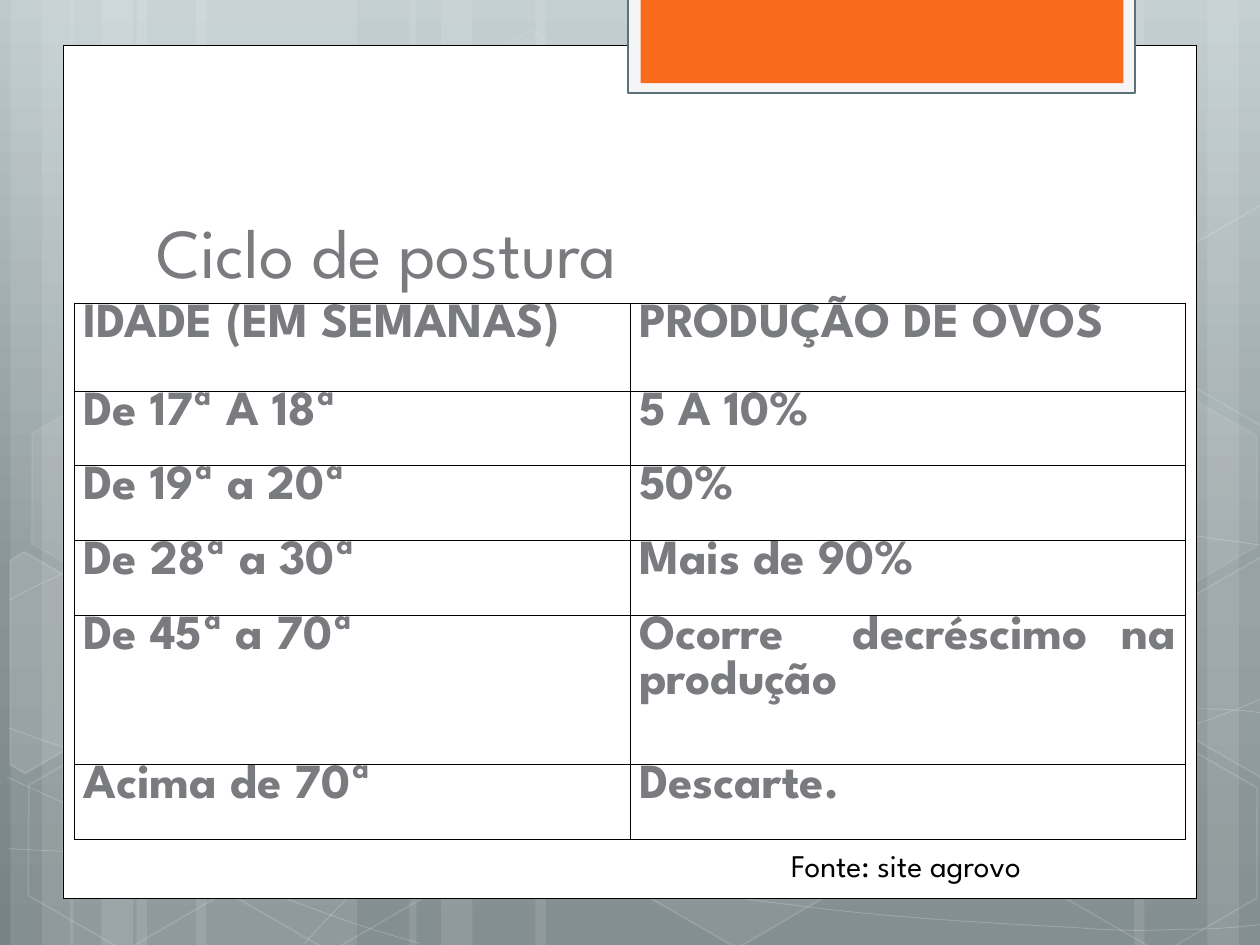
"""Build the laying-cycle slide: striped backdrop, white panel, title, table and source."""
from copy import deepcopy
from typing import NamedTuple, Optional

from lxml.etree import SubElement
from pptx import Presentation
from pptx.dml.color import RGBColor
from pptx.enum.shapes import MSO_SHAPE as Preset
from pptx.enum.text import MSO_ANCHOR as Anchor, MSO_AUTO_SIZE as AutoSize, PP_ALIGN as Align
from pptx.oxml.ns import qn
from pptx.util import Pt

COLORS = {
    "sky": "BDCACD", "mist": "889497", "slate": "778386", "white": "FFFFFF", "black": "000000",
    "tab": "F5F5F5", "tab_line": "5B7378", "orange": "F96A1B", "text": "797B7E",
}
FONT = "League Spartan"
WIDTH, HEIGHT = 720, 540
TILT = 30


class Ink(NamedTuple):
    color: str
    alpha: int = 100
    width: float = 1


class Box(NamedTuple):
    left: float
    top: float
    width: float
    height: float

    def lengths(self) -> list:
        return [Pt(value) for value in self]


class Panel(NamedTuple):
    box: Box
    fill: Ink
    line: Optional[Ink] = None


class StripeCluster(NamedTuple):
    edge: float
    wide: float = 126
    direction: int = 1


class Hexagon(NamedTuple):
    left: float
    top: float
    fill_alpha: int
    line_alpha: int


class CutHexagon(NamedTuple):
    points: list
    fill_alpha: int


BACKDROP = [(0, "sky"), (0.62, "mist"), (1, "slate")]
STRIPE_CLUSTERS = [StripeCluster(6), StripeCluster(40), StripeCluster(726, direction=-1),
                   StripeCluster(234, wide=222)]
CURVES = [
    [(5, 485), (44, 487), (83, 489), (137, 488), (191, 487), (258, 486), (330, 479),
     (402, 472), (504, 458), (570, 444), (636, 431), (703, 409), (725, 397)],
    [(5, 343), (26, 332), (47, 321), (87, 310), (128, 300), (186, 284), (250, 279),
     (314, 274), (392, 273), (471, 279), (550, 284), (682, 307), (725, 312)],
    [(4, 444), (91, 484), (178, 523), (240, 539)],
    [(5, 416), (27, 424), (50, 432), (92, 444), (134, 454), (197, 472), (257, 485),
     (317, 497), (392, 510), (452, 517), (512, 525), (576, 528), (614, 530),
     (652, 533), (662, 531), (680, 531), (699, 531), (712, 529), (725, 528)],
    [(174, 539), (187, 525), (200, 510), (217, 498), (235, 485), (259, 470), (279, 460),
     (300, 450), (312, 446), (338, 438), (364, 431), (413, 421), (438, 416),
     (464, 411), (467, 411), (490, 410), (512, 407), (547, 405), (572, 405),
     (597, 404), (638, 405), (638, 405), (654, 405), (670, 405), (686, 405),
     (699, 405), (711, 406), (718, 407), (724, 408), (722, 407), (724, 408)],
]
HEXAGONS = [
    Hexagon(240.5, 26, 4, 8), Hexagon(358, 424, 6, 12), Hexagon(8, 425.5, 0, 12),
    Hexagon(10, 224.5, 7, 8), Hexagon(125.5, 426, 0, 12),
    Hexagon(600.5, 427, 0, 12), Hexagon(600.5, 226, 7, 8),
]
RIGHT_CUT = [(660, 373.5), (691, 319.7), (697.5, 319.7), (757.5, 423.5), (754.5, 429), (692, 429)]
CUT_HEXAGONS = [
    CutHexagon([(-24, 339), (-19.6, 330.6), (44, 330.6), (75.3, 385.8), (44.3, 440), (34.4, 440)], 10),
    CutHexagon(RIGHT_CUT, 4),
    CutHexagon([(x, y - 201) for x, y in RIGHT_CUT], 0),
]
PANELS = [
    Panel(Box(36, 26, 648, 487.3), Ink("white"), Ink("black", width=0.5)),
    Panel(Box(359, -1.5, 289.7, 54.7), Ink("tab"), Ink("tab_line", width=1.25)),
    Panel(Box(366, -1.5, 276, 49), Ink("orange")),
]
TABLE_BOX = Box(42.5, 173.4, 635, 306.2)
ROW_HEIGHTS = [50, 42.7, 42.7, 42.7, 85.4, 42.7]
ROWS = [
    ("IDADE (EM SEMANAS)", "PRODUÇÃO DE OVOS"),
    ("De 17ª A 18ª", "5 A 10%"),
    ("De 19ª a 20ª", "50%"),
    ("De 28ª a 30ª", "Mais de 90%"),
    ("De 45ª a 70ª", "Ocorre  decréscimo na produção"),
    ("Acima de 70ª", "Descarte."),
]


def set_all(target, values: dict) -> None:
    for name, value in values.items():
        setattr(target, name, value)


def apply_ink(fill, ink: Optional[Ink]) -> None:
    if ink is None or ink.alpha == 0:
        fill.background()
        return
    fill.solid()
    fill.fore_color.rgb = RGBColor.from_string(COLORS[ink.color])
    if ink.alpha < 100:
        color = fill._xPr.find(qn("a:solidFill"))[0]
        SubElement(color, qn("a:alpha"), val=str(ink.alpha * 1000))


def paint(shape, fill: Optional[Ink], line: Optional[Ink] = None) -> None:
    shape.shadow.inherit = False
    apply_ink(shape.fill, fill)
    apply_ink(shape.line.fill, line)
    if line:
        shape.line.width = Pt(line.width)


def write(frame, text: str, size: float, color: str, align=Align.LEFT, bold: bool = False) -> None:
    frame.text = text
    paragraph = frame.paragraphs[0]
    paragraph.alignment = align
    font = paragraph.runs[0].font
    set_all(font, {"name": FONT, "size": Pt(size), "bold": bold})
    font.color.rgb = RGBColor.from_string(COLORS[color])


def draw_backdrop(slide) -> None:
    fill = slide.background.fill
    fill.gradient()
    fill.gradient_angle = 270
    stop_list = slide._element.find(".//" + qn("a:gsLst"))
    stop_list.append(deepcopy(stop_list[-1]))
    for stop, (position, color) in zip(fill.gradient_stops, BACKDROP):
        stop.color.rgb = RGBColor.from_string(COLORS[color])
        stop.position = position


def draw_stripes(slide, cluster: StripeCluster) -> None:
    for offset, width in ((72, cluster.wide), (0, 36), (18, 60)):
        left = cluster.edge + cluster.direction * offset - (width if cluster.direction < 0 else 0)
        stripe = slide.shapes.add_shape(Preset.RECTANGLE, *Box(left, 0, width, HEIGHT).lengths())
        paint(stripe, Ink("white", 10))


def add_outline(slide, points: list, close: bool):
    start, *others = [(Pt(x), Pt(y)) for x, y in points]
    builder = slide.shapes.build_freeform(*start)
    builder.add_line_segments(others, close=close)
    return builder.convert_to_shape()


def draw_curve(slide, controls: list) -> None:
    shape = add_outline(slide, controls, False)
    outline = shape._element.find(".//" + qn("a:path"))
    segments = outline.findall(qn("a:lnTo"))
    for first in range(0, len(segments), 3):
        bezier = SubElement(outline, qn("a:cubicBezTo"))
        for segment in segments[first:first + 3]:
            bezier.append(segment[0])
            outline.remove(segment)
    paint(shape, None, Ink("white", 20, 0.5))


def draw_hexagon(slide, hexagon: Hexagon) -> None:
    box = Box(hexagon.left, hexagon.top, 126, 109.4)
    shape = slide.shapes.add_shape(Preset.HEXAGON, *box.lengths())
    shape.adjustments[0] = 0.285
    shape.rotation = TILT
    paint(shape, Ink("white", hexagon.fill_alpha), Ink("white", hexagon.line_alpha))


def draw_cut_hexagon(slide, cut: CutHexagon) -> None:
    shape = add_outline(slide, cut.points, True)
    shape.rotation = TILT
    paint(shape, Ink("white", cut.fill_alpha), Ink("white", 12))


def draw_panel(slide, panel: Panel) -> None:
    shape = slide.shapes.add_shape(Preset.RECTANGLE, *panel.box.lengths())
    paint(shape, panel.fill, panel.line)


def draw_title(slide) -> None:
    title = slide.shapes.title
    slide.shapes._spTree.append(title._element)
    set_all(title, dict(zip(Box._fields, Box(82, 80.6, 553, 90).lengths())))
    set_all(title.text_frame, {"vertical_anchor": Anchor.BOTTOM, "auto_size": AutoSize.NONE,
                               "word_wrap": True})
    write(title.text_frame, "Ciclo de postura", 40, "text")


def add_borders(cell) -> None:
    properties = cell._tc.get_or_add_tcPr()
    for index, side in enumerate(("lnL", "lnR", "lnT", "lnB")):
        border = SubElement(properties, qn("a:" + side), w=str(Pt(0.5)))
        solid = SubElement(border, qn("a:solidFill"))
        SubElement(solid, qn("a:srgbClr"), val=COLORS["black"])
        properties.insert(index, border)


def draw_table(slide) -> None:
    table = slide.shapes.add_table(len(ROWS), len(ROWS[0]), *TABLE_BOX.lengths()).table
    set_all(table, {"first_row": False, "horz_banding": False})
    for row, height, texts in zip(table.rows, ROW_HEIGHTS, ROWS):
        row.height = Pt(height)
        for cell, text in zip(row.cells, texts):
            set_all(cell, {"margin_left": Pt(5.3), "margin_right": Pt(5.3),
                           "margin_top": 0, "margin_bottom": 0})
            cell.fill.background()
            add_borders(cell)
            write(cell.text_frame, text, 28, "text", Align.JUSTIFY, True)


def draw_source(slide) -> None:
    frame = slide.shapes.add_textbox(*Box(445, 479.8, 221, 29).lengths()).text_frame
    set_all(frame, {"word_wrap": True, "auto_size": AutoSize.SHAPE_TO_FIT_TEXT})
    write(frame, "Fonte: site agrovo", 18, "black")


def main() -> None:
    presentation = Presentation()
    set_all(presentation, {"slide_width": Pt(WIDTH), "slide_height": Pt(HEIGHT)})
    slide = presentation.slides.add_slide(presentation.slide_layouts[5])
    draw_backdrop(slide)
    for draw, items in ((draw_stripes, STRIPE_CLUSTERS), (draw_curve, CURVES),
                        (draw_hexagon, HEXAGONS), (draw_cut_hexagon, CUT_HEXAGONS),
                        (draw_panel, PANELS)):
        for item in items:
            draw(slide, item)
    draw_title(slide)
    draw_table(slide)
    draw_source(slide)
    presentation.save("out.pptx")


if __name__ == "__main__":
    main()
